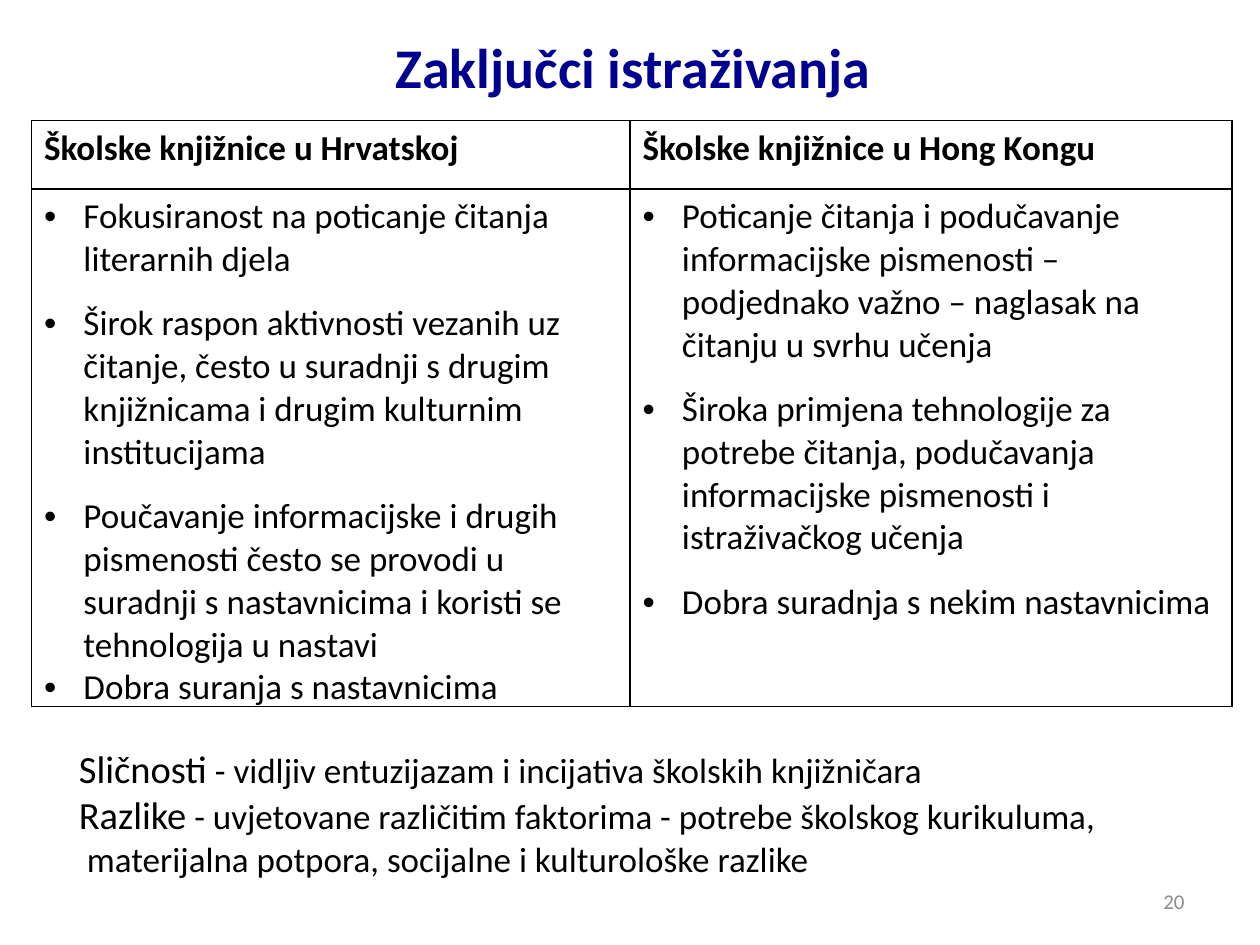
from dataclasses import dataclass

from lxml.etree import SubElement
from pptx import Presentation
from pptx.dml.color import RGBColor
from pptx.enum.text import MSO_ANCHOR as Anchor, MSO_AUTO_SIZE as Auto, PP_ALIGN as Align
from pptx.oxml import parse_xml
from pptx.oxml.ns import nsdecls, qn
from pptx.util import Pt

BLACK = RGBColor(0, 0, 0)
NAVY = RGBColor(0, 0, 0x90)
GRAY = RGBColor(0x8C, 0x8C, 0x8C)
FONT = "Calibri"
BODY = 20
LEAD = 22
GAP = 12.2
INDENT = 22.5


@dataclass(frozen=True)
class Item:
    text: str
    gap: float = GAP


@dataclass(frozen=True)
class Column:
    head: str
    width: float
    items: tuple[Item, ...]


@dataclass(frozen=True)
class Note:
    lead: str
    text: str


COLUMNS = (
    Column("Školske knjižnice u Hrvatskoj", 342, (
        Item("Fokusiranost na poticanje čitanja literarnih djela", 0),
        Item("Širok raspon aktivnosti vezanih uz čitanje, često u suradnji "
             "s drugim knjižnicama i drugim kulturnim institucijama"),
        Item("Poučavanje informacijske i drugih pismenosti često se provodi "
             "u suradnji s nastavnicima i koristi se tehnologija u nastavi"),
        Item("Dobra suranja s nastavnicima", 0),
    )),
    Column("Školske knjižnice u Hong Kongu", 344, (
        Item("Poticanje čitanja i podučavanje informacijske pismenosti – "
             "podjednako važno – naglasak na čitanju u svrhu učenja", 0),
        Item("Široka primjena tehnologije za potrebe čitanja, podučavanja "
             "informacijske pismenosti i istraživačkog učenja"),
        Item("Dobra suradnja s nekim nastavnicima"),
    )),
)
ROWS = (39, 295)
NOTES = (
    Note("Sličnosti", " - vidljiv entuzijazam i incijativa školskih knjižničara"),
    Note("Razlike", " - uvjetovane različitim faktorima - potrebe školskog kurikuluma,"),
    Note("", " materijalna potpora, socijalne i kulturološke razlike"),
)


def style(font, size: float, color: RGBColor = BLACK, bold: bool = False) -> None:
    font.name, font.size, font.bold = FONT, Pt(size), bold
    font.color.rgb = color


def add_box(slide, left: float, top: float, width: float, height: float,
            anchor: Anchor = Anchor.TOP):
    frame = slide.shapes.add_textbox(Pt(left), Pt(top), Pt(width), Pt(height)).text_frame
    frame.word_wrap = True
    frame.vertical_anchor = anchor
    return frame


def add_label(slide, area: tuple[float, ...], text: str, size: float,
              color: RGBColor, align: Align, bold: bool = False) -> None:
    para = add_box(slide, *area, Anchor.MIDDLE).paragraphs[0]
    para.text, para.alignment = text, align
    style(para.font, size, color, bold)


def next_para(frame, index: int):
    return frame.add_paragraph() if index else frame.paragraphs[0]


def frame_cell(cell) -> None:
    """Clear the fill and rule all four sides."""
    cell.fill.background()
    props = cell._tc.get_or_add_tcPr()
    for spot, side in enumerate("LRTB"):
        props.insert(spot, parse_xml(
            f'<a:ln{side} {nsdecls("a")} w="{Pt(1)}"><a:solidFill>'
            f'<a:srgbClr val="{BLACK}"/></a:solidFill></a:ln{side}>'))


def add_bullet(para) -> None:
    props = para._p.get_or_add_pPr()
    props.set("marL", str(Pt(INDENT)))
    props.set("indent", str(-Pt(INDENT)))
    SubElement(props, qn("a:buFont")).set("typeface", "Arial")
    SubElement(props, qn("a:buChar")).set("char", "•")


def fill_column(table, index: int, column: Column) -> None:
    table.columns[index].width = Pt(column.width)
    head, body = (table.cell(row, index) for row in range(len(ROWS)))
    for cell in (head, body):
        frame_cell(cell)
    para = head.text_frame.paragraphs[0]
    para.text = column.head
    style(para.font, BODY, bold=True)
    for spot, item in enumerate(column.items):
        para = next_para(body.text_frame, spot)
        para.text = item.text
        if item.gap:
            para.space_before = Pt(item.gap)
        add_bullet(para)
        style(para.font, BODY)


def add_grid(slide) -> None:
    width = sum(column.width for column in COLUMNS)
    table = slide.shapes.add_table(len(ROWS), len(COLUMNS), Pt(18), Pt(69),
                                   Pt(width), Pt(sum(ROWS))).table
    table.first_row = table.horz_banding = False
    for row, height in zip(table.rows, ROWS):
        row.height = Pt(height)
    for index, column in enumerate(COLUMNS):
        fill_column(table, index, column)


def add_notes(slide) -> None:
    frame = add_box(slide, 38, 422, 646, 85)
    frame.auto_size = Auto.SHAPE_TO_FIT_TEXT
    for index, note in enumerate(NOTES):
        para = next_para(frame, index)
        for text, size in ((note.lead, LEAD), (note.text, BODY)):
            if text:
                run = para.add_run()
                run.text = text
                style(run.font, size)


def main() -> None:
    deck = Presentation()
    deck.slide_width, deck.slide_height = Pt(720), Pt(540)
    slide = deck.slides.add_slide(deck.slide_layouts[6])
    add_label(slide, (38, 12, 648, 52), "Zaključci istraživanja", 32, NAVY,
              Align.CENTER, bold=True)
    add_grid(slide)
    add_notes(slide)
    add_label(slide, (516, 500.5, 168, 29), "20", 12, GRAY, Align.RIGHT)
    deck.save("out.pptx")


if __name__ == "__main__":
    main()
